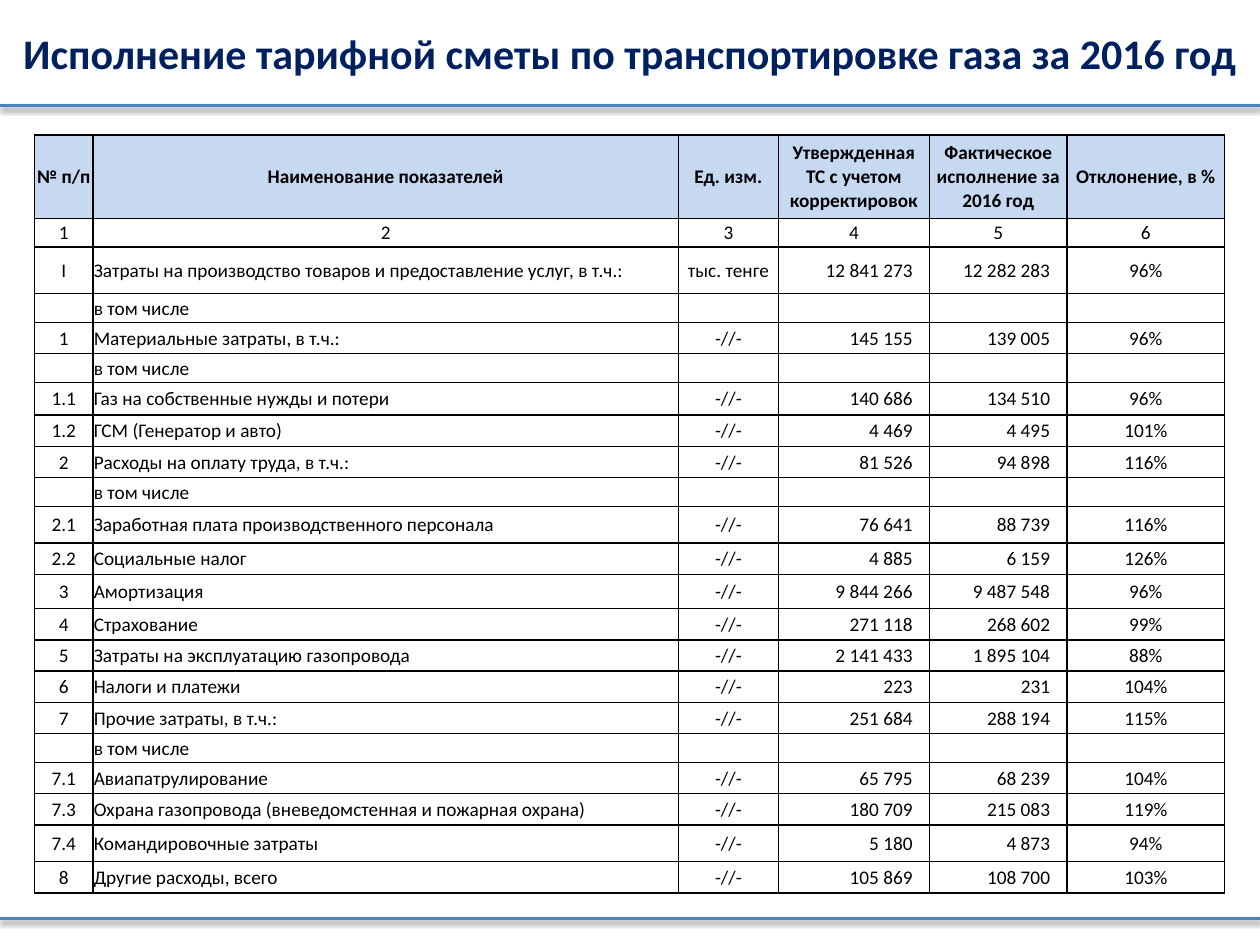
from lxml import etree
from pptx import Presentation, util as u
from pptx.dml.color import RGBColor
from pptx.enum import shapes, text
from pptx.oxml import parse_xml
from pptx.oxml.ns import nsdecls, qn

# Content
TITLE = "Исполнение тарифной сметы по транспортировке газа за 2016 год"
HEADER = ["№ п/п", "Наименование показателей", "Ед. изм.",
          "Утвержденная ТС с учетом корректировок",
          "Фактическое исполнение за 2016 год", "Отклонение, в %"]
SAME = "-//-"
INCL = ("", "в том числе", "", "", "", "")
ROWS = [
    ("I", "Затраты на производство товаров и предоставление услуг, в т.ч.:",
     "тыс. тенге", "12 841 273", "12 282 283", "96%"),
    INCL,
    ("1", "Материальные затраты, в т.ч.:", SAME, "145 155", "139 005", "96%"),
    INCL,
    ("1.1", "Газ на собственные нужды и потери", SAME, "140 686", "134 510", "96%"),
    ("1.2", "ГСМ (Генератор и авто)", SAME, "4 469", "4 495", "101%"),
    ("2", "Расходы на оплату труда, в т.ч.:", SAME, "81 526", "94 898", "116%"),
    INCL,
    ("2.1", "Заработная плата производственного персонала", SAME,
     "76 641", "88 739", "116%"),
    ("2.2", "Социальные налог", SAME, "4 885", "6 159", "126%"),
    ("3", "Амортизация", SAME, "9 844 266", "9 487 548", "96%"),
    ("4", "Страхование", SAME, "271 118", "268 602", "99%"),
    ("5", "Затраты на эксплуатацию газопровода", SAME,
     "2 141 433", "1 895 104", "88%"),
    ("6", "Налоги и платежи", SAME, "223", "231", "104%"),
    ("7", "Прочие затраты, в т.ч.:", SAME, "251 684", "288 194", "115%"),
    INCL,
    ("7.1", "Авиапатрулирование", SAME, "65 795", "68 239", "104%"),
    ("7.3", "Охрана газопровода (вневедомстенная и пожарная охрана)", SAME,
     "180 709", "215 083", "119%"),
    ("7.4", "Командировочные затраты", SAME, "5 180", "4 873", "94%"),
    ("8", "Другие расходы, всего", SAME, "105 869", "108 700", "103%"),
]

# Theme and measures (cm)
THEME = dict(font="Calibri", title="002060", text="000000", head="C6D9F1",
             rule="4F81BD", border="000000", title_pt=24, body_pt=11)
COLS = [1.17, 11.81, 2.01, 3.05, 2.77, 3.18]
HEAD_H, NUMBER_H, INCL_H, ROW_H = 1.68, 0.58, 0.58, 0.63
TALL = {"I": 0.94, "1.1": 0.66, "2.1": 0.74, "3": 0.69, "7.4": 0.74}
NAME_COL, VALUE_COLS = 1, (3, 4)
PAD, HEAD_PAD, VALUE_PAD = 0.02, 0.1, 0.34
WIDTH, HEIGHT = 25.4, 19.05
AL = text.PP_ALIGN


def add_run(p, words, size, color, bold):
    r = p.add_run()
    r.text = words
    r.font.name, r.font.size, r.font.bold = THEME["font"], u.Pt(size), bold
    r.font.color.rgb = RGBColor.from_string(color)


def add_rule(s, y):
    sp = s.shapes.add_connector(shapes.MSO_CONNECTOR.STRAIGHT,
                                0, u.Cm(y), u.Cm(WIDTH), u.Cm(y))
    sp.line.color.rgb = RGBColor.from_string(THEME["rule"])
    sp.line.width = u.Pt(2)
    sp._element.spPr.append(parse_xml(
        f'<a:effectLst {nsdecls("a")}><a:outerShdw blurRad="40000" dist="20000" '
        'dir="5400000" rotWithShape="0"><a:srgbClr val="000000">'
        '<a:alpha val="38000"/></a:srgbClr></a:outerShdw></a:effectLst>'))


def add_borders(cell):
    tcPr = cell._tc.get_or_add_tcPr()
    for side in "LRTB":
        tcPr.append(parse_xml(
            f'<a:ln{side} {nsdecls("a")} w="12700"><a:solidFill>'
            f'<a:srgbClr val="{THEME["border"]}"/></a:solidFill></a:ln{side}>'))


def fill_cell(cell, words, col, kind):
    head, value = kind == "head", kind == "body" and col in VALUE_COLS
    add_borders(cell)
    if head:
        cell.fill.solid()
        cell.fill.fore_color.rgb = RGBColor.from_string(THEME["head"])
    else:
        cell.fill.background()
    side = HEAD_PAD if head and col in VALUE_COLS else PAD
    cell.margin_left = u.Cm(side)
    cell.margin_right = u.Cm(VALUE_PAD if value else side)
    cell.margin_top, cell.margin_bottom = u.Cm(PAD), 0
    cell.vertical_anchor = text.MSO_ANCHOR.MIDDLE
    p = cell.text_frame.paragraphs[0]
    p.alignment = AL.CENTER
    if value:
        p.alignment = AL.RIGHT
    elif kind == "body" and col == NAME_COL:
        p.alignment = AL.LEFT
    if words:
        add_run(p, words, THEME["body_pt"], THEME["text"], head)
    else:  # keeps empty cells from stretching the row
        etree.SubElement(p._p, qn("a:endParaRPr"), sz=str(THEME["body_pt"] * 100))


def row_height(row):
    return INCL_H if row is INCL else TALL.get(row[0], ROW_H)


prs = Presentation()
prs.slide_width, prs.slide_height = u.Cm(WIDTH), u.Cm(HEIGHT)
s = prs.slides.add_slide(prs.slide_layouts[6])

# Title
sp = s.shapes.add_textbox(0, u.Cm(0.43), u.Cm(WIDTH), u.Cm(1.28))
sp.text_frame.word_wrap = True
p = sp.text_frame.paragraphs[0]
p.alignment = AL.CENTER
add_run(p, TITLE, THEME["title_pt"], THEME["title"], True)

# Rules under the title and at the foot
for y in (2.13, 18.52):
    add_rule(s, y)

# Table: header, column numbers, then the estimate lines
numbers = [str(i + 1) for i in range(len(COLS))]
lines = [("head", HEADER, HEAD_H), ("number", numbers, NUMBER_H)]
lines += [("body", row, row_height(row)) for row in ROWS]
tbl = s.shapes.add_table(len(lines), len(COLS), u.Cm(0.7), u.Cm(2.72),
                         u.Cm(sum(COLS)), u.Cm(sum(h for _, _, h in lines))).table
tbl.first_row = tbl.horz_banding = False
for column, w in zip(tbl.columns, COLS):
    column.width = u.Cm(w)
for i, (kind, row, h) in enumerate(lines):
    tbl.rows[i].height = u.Cm(h)
    for j, words in enumerate(row):
        fill_cell(tbl.cell(i, j), words, j, kind)

prs.save("out.pptx")
